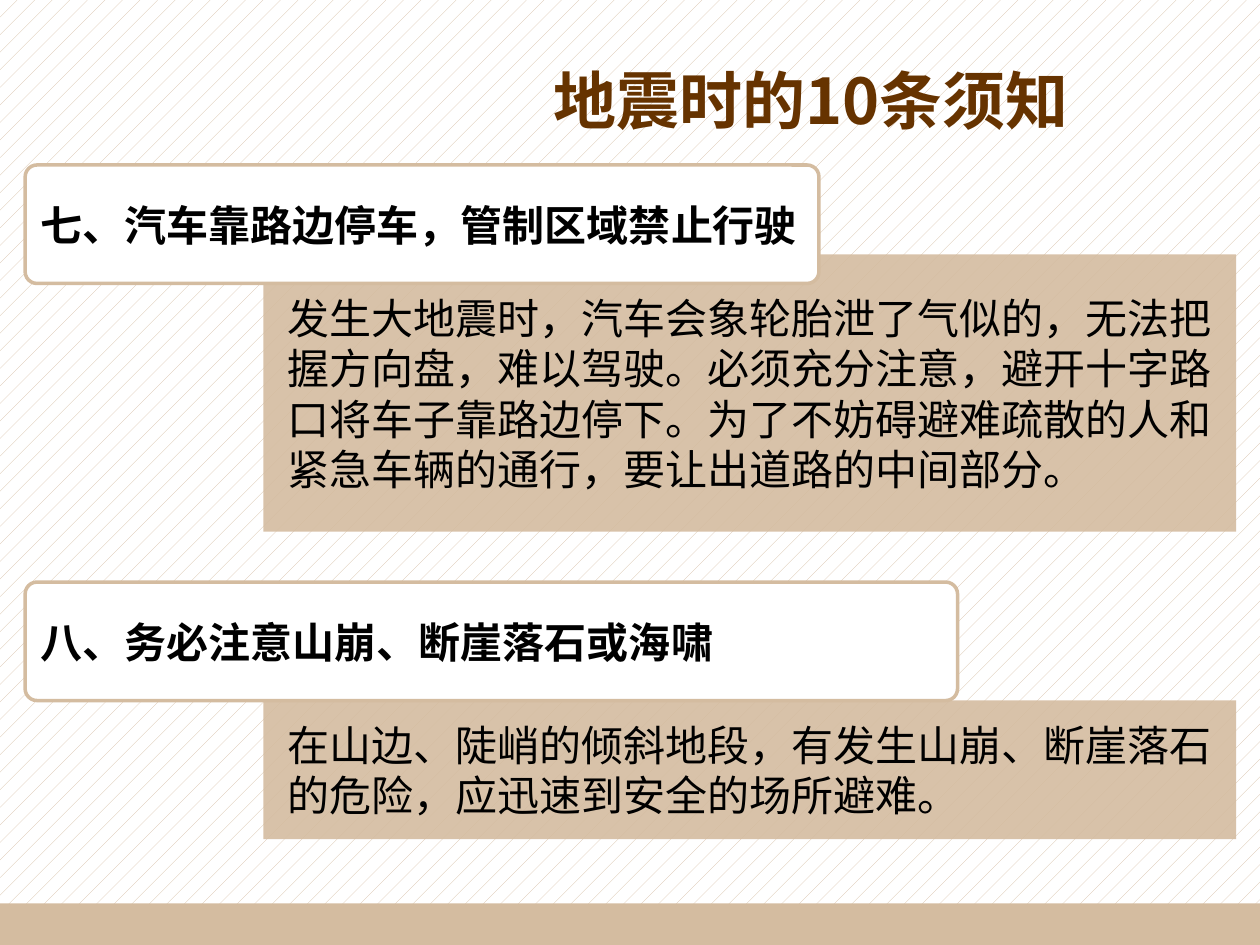
from dataclasses import dataclass

from lxml.etree import SubElement
from pptx import Presentation
from pptx.dml.color import RGBColor
from pptx.enum.dml import MSO_PATTERN
from pptx.enum.shapes import MSO_SHAPE as Preset
from pptx.enum.text import MSO_ANCHOR as Anchor, PP_ALIGN as Align
from pptx.oxml.ns import qn
from pptx.util import Inches, Pt

FONT = "Noto Sans CJK SC"
TAN = "D4BCA0"
WHITE = "FFFFFF"
BLACK = "000000"
BROWN = "663300"


@dataclass
class Section:
    heading: str
    body: str
    heading_top: float
    heading_width: float
    body_top: float
    body_height: float


SECTIONS = [
    Section("八、务必注意山崩、断崖落石或海啸",
            "在山边、陡峭的倾斜地段，有发生山崩、断崖落石的危险，应迅速到安全的场所避难。",
            4.62, 7.4, 5.56, 1.1),
    Section("七、汽车靠路边停车，管制区域禁止行驶",
            "发生大地震时，汽车会象轮胎泄了气似的，无法把握方向盘，难以驾驶。"
            "必须充分注意，避开十字路口将车子靠路边停下。"
            "为了不妨碍避难疏散的人和紧急车辆的通行，要让出道路的中间部分。",
            1.31, 6.3, 2.02, 2.2),
]


def color(value: str) -> RGBColor:
    return RGBColor.from_string(value)


def add_panel(page, preset, left: float, top: float, width: float, height: float, fill: str):
    panel = page.shapes.add_shape(preset, Inches(left), Inches(top), Inches(width), Inches(height))
    panel.shadow.inherit = False
    panel.fill.solid()
    panel.fill.fore_color.rgb = color(fill)
    panel.line.fill.background()
    return panel


def write(box, text: str, size: float, ink: str, bold: bool, align, anchor, inset: float) -> None:
    frame = box.text_frame
    frame.word_wrap = True
    frame.vertical_anchor = anchor
    frame.margin_left = Inches(inset)
    para = frame.paragraphs[0]
    para.text = text
    para.alignment = align
    font = para.font
    font.name = FONT
    font.size = Pt(size)
    font.bold = bold
    font.color.rgb = color(ink)
    defaults = para._p.pPr.find(qn("a:defRPr"))
    SubElement(defaults, qn("a:ea")).set("typeface", FONT)


def add_section(page, section: Section) -> None:
    body = add_panel(page, Preset.RECTANGLE, 2.09, section.body_top, 7.72, section.body_height, TAN)
    tint = body._element.spPr.find(qn("a:solidFill"))[0]
    SubElement(tint, qn("a:alpha")).set("val", "90000")
    write(body, section.body, 24, BLACK, False, Align.LEFT, Anchor.MIDDLE, 0.19)

    heading = add_panel(page, Preset.ROUNDED_RECTANGLE, 0.2, section.heading_top,
                        section.heading_width, 0.94, WHITE)
    heading.adjustments[0] = 0.1
    heading.line.color.rgb = color(TAN)
    heading.line.width = Pt(2)
    write(heading, section.heading, 24, BLACK, True, Align.LEFT, Anchor.MIDDLE, 0.1)


def main() -> None:
    deck = Presentation()
    deck.slide_width, deck.slide_height = Inches(10), Inches(7.5)
    page = deck.slides.add_slide(deck.slide_layouts[6])

    backdrop = page.background.fill
    backdrop.patterned()
    backdrop.pattern = MSO_PATTERN.PERCENT_5
    backdrop.fore_color.rgb = color(TAN)
    backdrop.back_color.rgb = color(WHITE)

    add_panel(page, Preset.RECTANGLE, 0, 7.17, 10, 0.33, TAN)
    for section in SECTIONS:
        add_section(page, section)

    title = page.shapes.add_textbox(Inches(2.87), Inches(0.44), Inches(7.13), Inches(0.7))
    write(title, "地震时的10条须知", 36, BROWN, True, Align.CENTER, Anchor.TOP, 0.1)
    deck.save("out.pptx")


if __name__ == "__main__":
    main()
